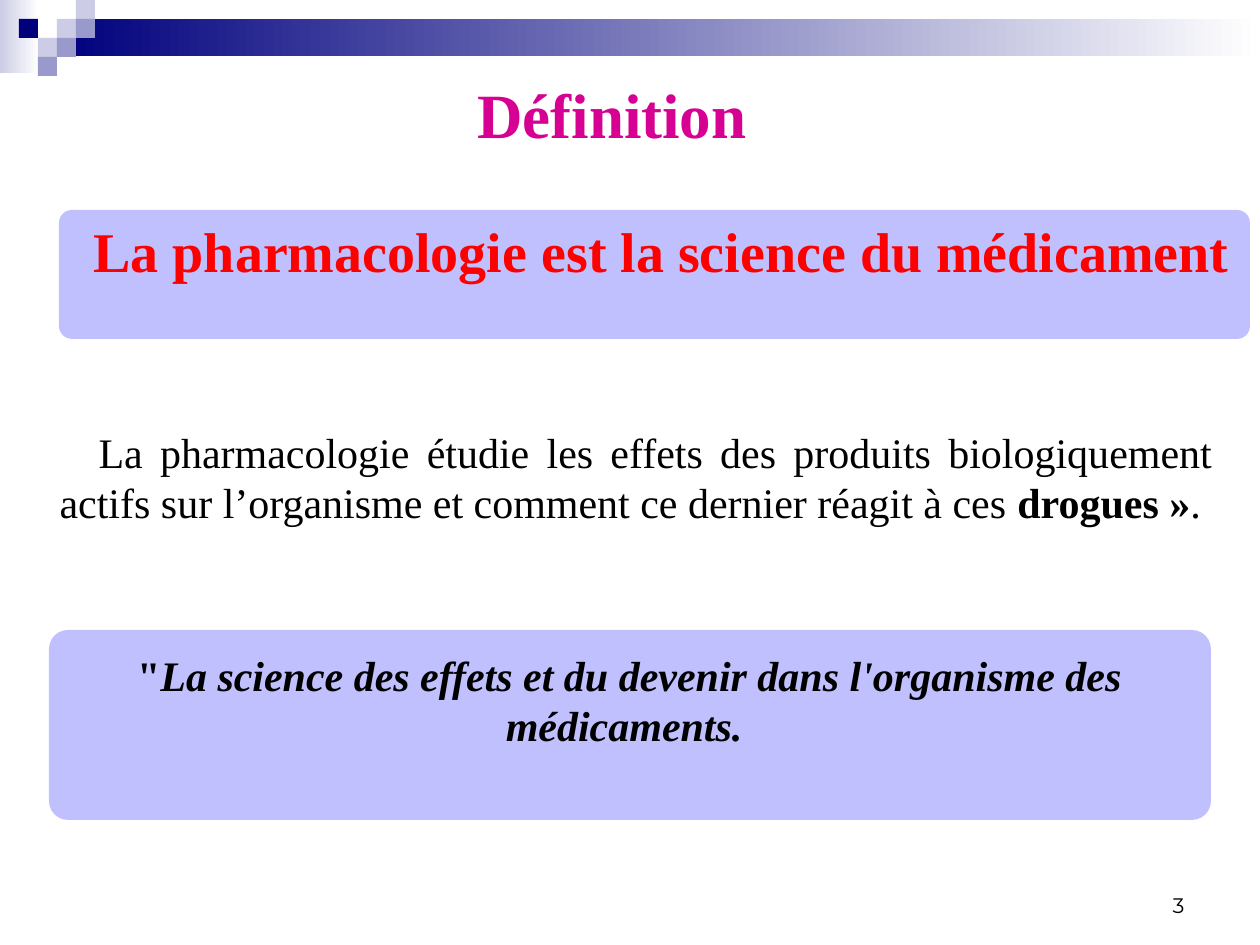
from dataclasses import dataclass

from lxml import etree
from pptx import Presentation
from pptx.dml.color import RGBColor
from pptx.enum.shapes import MSO_SHAPE
from pptx.enum.text import MSO_ANCHOR, MSO_AUTO_SIZE, PP_ALIGN
from pptx.oxml.ns import qn
from pptx.util import Emu, Pt

RECTANGLE = MSO_SHAPE.RECTANGLE
ROUNDED = MSO_SHAPE.ROUNDED_RECTANGLE
TOP, BOTTOM = MSO_ANCHOR.TOP, MSO_ANCHOR.BOTTOM
CENTER, RIGHT, JUSTIFY = PP_ALIGN.CENTER, PP_ALIGN.RIGHT, PP_ALIGN.JUSTIFY
NO_AUTOFIT = MSO_AUTO_SIZE.NONE
EMU_PER_PX = 914400 / 126
SQUARE = 19


@dataclass(frozen=True)
class Theme:
    serif: str = "Times New Roman"
    sans: str = "Montserrat"
    navy: str = "00007D"
    lavender: str = "9999CC"
    pale: str = "CCCCE6"
    white: str = "FFFFFF"
    panel: str = "C0C0FF"
    title: str = "D60093"
    accent: str = "FF0000"
    text: str = "000000"
    title_size: int = 36
    statement_size: int = 32
    body_size: int = 24
    number_size: int = 12


THEME = Theme()


def px(value):
    return Emu(round(value * EMU_PER_PX))


def place(shape, box):
    shape.left, shape.top, shape.width, shape.height = map(px, box)


def add_block(slide, box, *colors, kind=RECTANGLE):
    shape = slide.shapes.add_shape(kind, *map(px, box))
    shape.shadow.inherit = False
    shape.line.fill.background()
    if len(colors) == 1:
        shape.fill.solid()
        shape.fill.fore_color.rgb = RGBColor.from_string(colors[0])
    else:
        shape.fill.gradient()
        shape.fill.gradient_angle = 0
        for stop, color in zip(shape.fill.gradient_stops, colors):
            stop.color.rgb = RGBColor.from_string(color)
    return shape


def add_panel(slide, box):
    panel = add_block(slide, box, THEME.panel, kind=ROUNDED)
    panel.adjustments[0] = 0.1


def write_text(shape, parts, size, color=THEME.text, font=THEME.serif,
               align=CENTER, anchor=TOP):
    frame = shape.text_frame
    frame.word_wrap = True
    frame.auto_size = NO_AUTOFIT
    frame.vertical_anchor = anchor
    paragraph = frame.paragraphs[0]
    paragraph.alignment = align
    for text, bold, italic in parts:
        run = paragraph.add_run()
        run.text = text
        run.font.name = font
        run.font.size = Pt(size)
        run.font.bold = bold
        run.font.italic = italic
        run.font.color.rgb = RGBColor.from_string(color)
    return paragraph


def add_text(slide, box, parts, size, **style):
    shape = slide.shapes.add_textbox(*map(px, box))
    write_text(shape, parts, size, **style)


def add_header(slide):
    add_block(slide, (0, 0, 39, 73), THEME.pale, THEME.white)
    add_block(slide, (57, 19, 1203, 37), THEME.navy, THEME.white)
    squares = [
        (3, 1, THEME.pale), (4, 0, THEME.pale), (4, 1, THEME.lavender),
        (2, 2, THEME.pale), (1, 1, THEME.navy), (3, 2, THEME.lavender),
        (2, 3, THEME.lavender),
    ]
    for column, row, color in squares:
        add_block(slide, (column * SQUARE, row * SQUARE, SQUARE, SQUARE), color)


def fill_title(slide):
    title = slide.shapes.title
    place(title, (384, 69, 456, 90))
    write_text(title, [("Définition", True, False)], THEME.title_size, THEME.title)


def fill_body(slide):
    body = slide.placeholders[1]
    place(body, (0, 420, 1225, 242))
    paragraph = write_text(body, [
        ("La pharmacologie étudie les effets des produits biologiquement actifs "
         "sur l’organisme et comment ce dernier réagit à ces ", False, False),
        ("drogues »", True, False),
        (".", False, False),
    ], THEME.body_size, align=JUSTIFY)
    paragraph.space_before = Pt(5)
    properties = paragraph._p.get_or_add_pPr()
    properties.set("marL", str(px(47)))
    properties.set("indent", str(px(39)))
    etree.SubElement(properties, qn("a:buNone"))


def main():
    presentation = Presentation()
    presentation.slide_width, presentation.slide_height = px(1260), px(945)
    slide = presentation.slides.add_slide(presentation.slide_layouts[1])
    add_header(slide)
    fill_title(slide)
    fill_body(slide)
    add_text(slide, (903, 861, 294, 63), [("3", False, False)], THEME.number_size,
             font=THEME.sans, align=RIGHT, anchor=BOTTOM)
    add_panel(slide, (49, 630, 1162, 190))
    add_text(slide, (78, 643, 1103, 115), [
        ('"', True, False),
        ("La science des effets et du devenir dans l'organisme des médicaments. ",
         True, True),
    ], THEME.body_size)
    add_panel(slide, (59, 210, 1191, 129))
    add_text(slide, (64, 210, 1196, 81),
             [("La pharmacologie est la science du médicament", True, False)],
             THEME.statement_size, color=THEME.accent)
    presentation.save("out.pptx")


if __name__ == "__main__":
    main()
